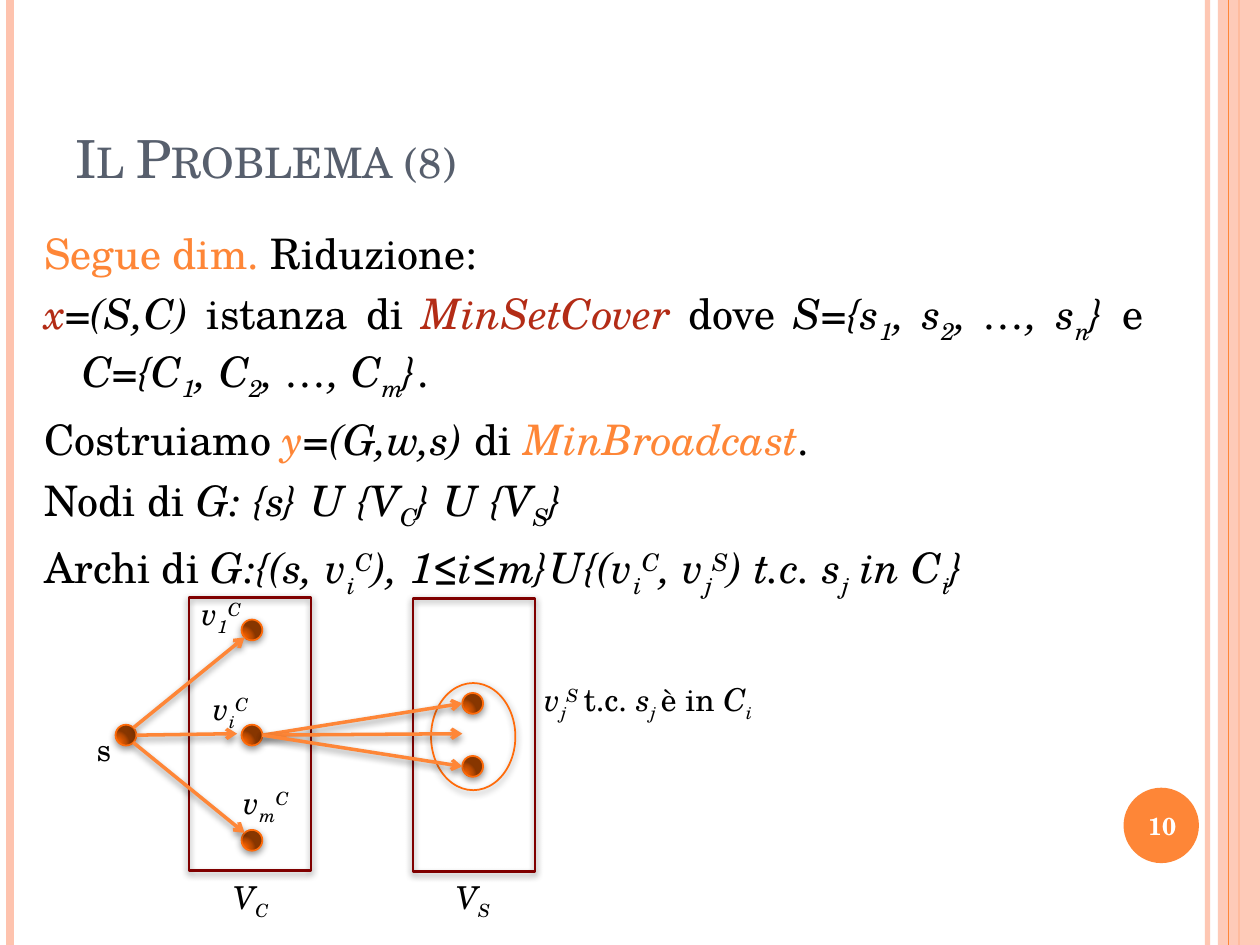
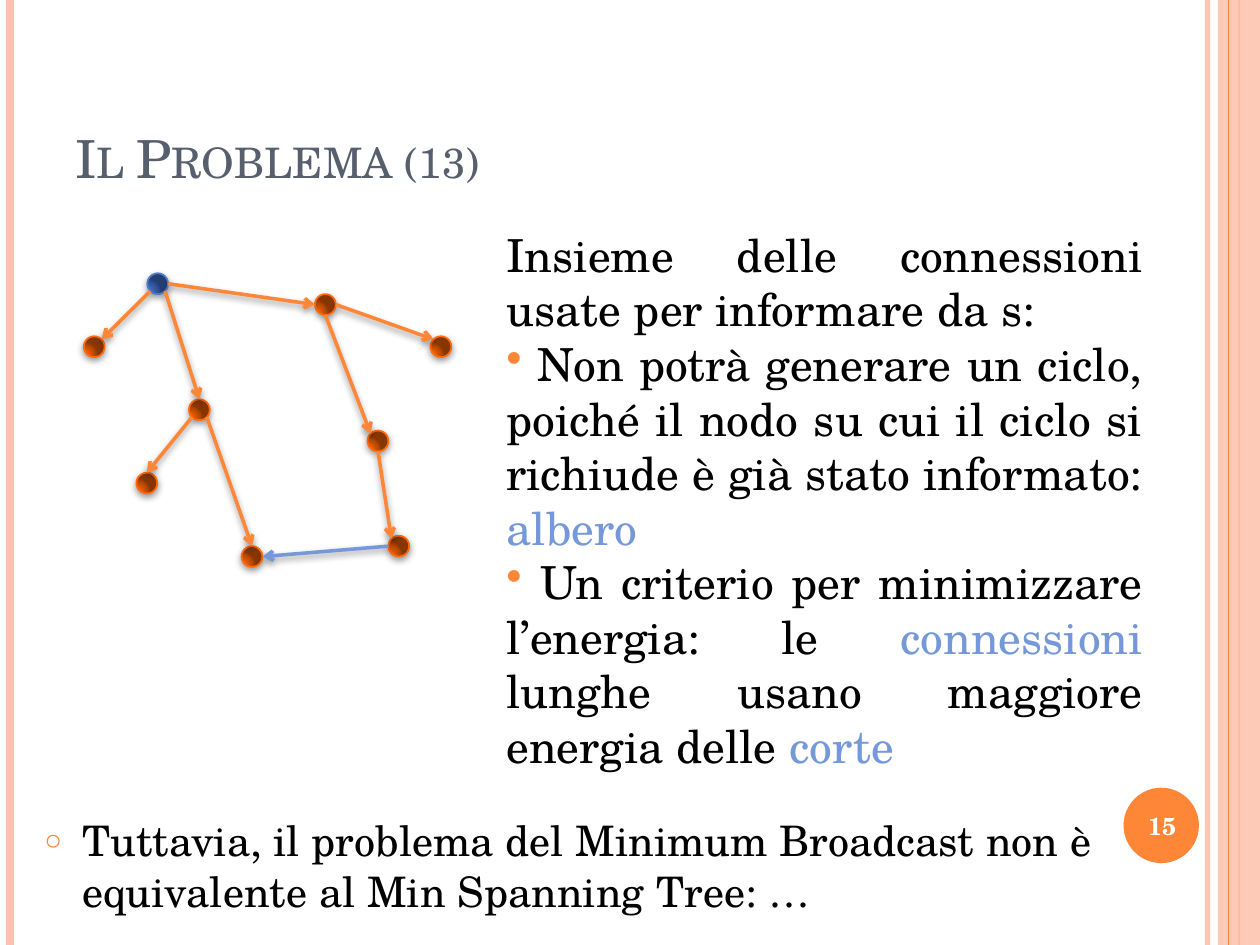
"""Builds two slides on the reduction from MinSetCover to MinBroadcast."""
from dataclasses import dataclass
from itertools import groupby

from lxml import etree
from pptx import Presentation
from pptx.dml.color import RGBColor
from pptx.enum.shapes import MSO_CONNECTOR, MSO_SHAPE
from pptx.enum.text import MSO_ANCHOR, MSO_AUTO_SIZE, PP_ALIGN
from pptx.oxml import parse_xml
from pptx.oxml.ns import nsdecls, qn
from pptx.util import Cm, Pt

STRAIGHT = MSO_CONNECTOR.STRAIGHT
RECTANGLE, OVAL = MSO_SHAPE.RECTANGLE, MSO_SHAPE.OVAL
TOP, MIDDLE, BOTTOM = MSO_ANCHOR.TOP, MSO_ANCHOR.MIDDLE, MSO_ANCHOR.BOTTOM
NO_FIT, GROW = MSO_AUTO_SIZE.NONE, MSO_AUTO_SIZE.SHAPE_TO_FIT_TEXT
LEFT, CENTER, JUSTIFY = PP_ALIGN.LEFT, PP_ALIGN.CENTER, PP_ALIGN.JUSTIFY

SUB, SUPER = -25000, 30000
SHIFTS = {"_": SUB, "^": SUPER}
DIAGONAL = 0.71
SITES = {
    "N": (0, -1), "S": (0, 1), "W": (-1, 0), "E": (1, 0),
    "NE": (DIAGONAL, -DIAGONAL), "NW": (-DIAGONAL, -DIAGONAL),
    "SE": (DIAGONAL, DIAGONAL), "SW": (-DIAGONAL, DIAGONAL),
}


@dataclass(frozen=True)
class Theme:
    font: str = "TeX Gyre Schola"
    ink: str = "000000"
    white: str = "FFFFFF"
    heading: str = "575F6D"
    orange: str = "FE8637"
    peach: str = "FEC3AE"
    red: str = "B32C16"
    blue: str = "7598D9"
    frame: str = "800000"
    rim: str = "FF6B0A"
    source_rim: str = "4F7CCF"
    ember: tuple = ("FD6400", "F46100", "B74900", "873600")
    ocean: tuple = ("4574CC", "4370C5", "2F5397", "233E70")
    stops: tuple = (0, 30, 75, 100)
    title_size: float = 30
    body_size: float = 24
    aside_size: float = 26
    label_size: float = 18
    number_size: float = 14
    node_size: float = 0.42
    indent: float = 0.76


@dataclass(frozen=True)
class Run:
    text: str
    color: str = Theme.ink
    italic: bool = False
    shift: int = 0


def math(source):
    """Turns v_i^C notation into italic runs with raised and lowered letters."""
    letters = [(SHIFTS.get(before, 0), letter)
               for before, letter in zip(" " + source, source) if letter not in SHIFTS]
    return [Run("".join(letter for _, letter in group), italic=True, shift=shift)
            for shift, group in groupby(letters, key=lambda pair: pair[0])]


class Deck:
    """Holds the theme and the current slide and draws each kind of element."""

    def __init__(self, theme):
        self.theme = theme
        self.presentation = Presentation()
        self.presentation.slide_width = Cm(25.4)
        self.presentation.slide_height = Cm(19.05)
        self.slide = None

    def start(self, title, number):
        """Adds a slide with its side bands, title and page number."""
        theme = self.theme
        layout = self.presentation.slide_layouts[1]
        self.slide = self.presentation.slides.add_slide(layout)
        self.line((24.34, 0), (24.34, 19.05), theme.peach, 3, opacity=93)
        self.line((0.21, 0), (0.21, 19.05), theme.peach, 4.5)
        self.line((24.98, 0), (24.98, 19.05), theme.orange, 1.5)
        self.shape(RECTANGLE, (24.55, 0, 0.85, 19.05), fill=theme.peach, opacity=87)
        self.line((24.76, 0), (24.76, 19.05), theme.orange, 0.75)
        self.shape(OVAL, (22.65, 15.88, 1.52, 1.52), fill=theme.orange)

        heading = self.slide.shapes.title
        self.place(heading, (1.27, 0.76, 20.75, 3.18), BOTTOM)
        paragraph = heading.text_frame.paragraphs[0]
        paragraph.alignment = LEFT
        self.add_runs(paragraph, [Run(title, theme.heading)], theme.title_size)
        paragraph.runs[0].font._element.set("cap", "small")

        page = self.slide.shapes.add_textbox(0, 0, 0, 0)
        self.place(page, (22.58, 15.93, 1.7, 1.45), MIDDLE)
        paragraph = page.text_frame.paragraphs[0]
        paragraph.alignment = CENTER
        self.add_runs(paragraph, [Run(str(number), theme.white)], theme.number_size)
        paragraph.runs[0].font.bold = True

    def place(self, holder, box, anchor=TOP, fit=NO_FIT, wrap=True):
        """Moves a text holder and sets how its text sits."""
        holder.left, holder.top, holder.width, holder.height = map(Cm, box)
        frame = holder.text_frame
        frame.vertical_anchor = anchor
        frame.auto_size = fit
        frame.word_wrap = wrap

    def add_runs(self, paragraph, runs, size):
        """Adds runs to a paragraph."""
        for piece in runs:
            run = paragraph.add_run()
            run.text = piece.text
            font = run.font
            font.name = self.theme.font
            font.size = Pt(size)
            font.italic = piece.italic
            font.color.rgb = RGBColor.from_string(piece.color)
            if piece.shift:
                font._element.set("baseline", str(piece.shift))

    def bullet(self, paragraph, mark, indent=0, scale=100):
        """Sets the hanging indent and the bullet, or none if mark is empty."""
        properties = paragraph._p.get_or_add_pPr()
        properties.set("marL", str(Cm(indent)))
        properties.set("indent", str(-Cm(indent)))
        if not mark:
            etree.SubElement(properties, qn("a:buNone"))
            return
        color = etree.SubElement(properties, qn("a:buClr"))
        etree.SubElement(color, qn("a:srgbClr"), val=self.theme.orange)
        etree.SubElement(properties, qn("a:buSzPct"), val=str(scale * 1000))
        etree.SubElement(properties, qn("a:buChar"), char=mark)

    def fill_text(self, holder, paragraphs, size, align):
        """Fills a holder with paragraphs and yields each one."""
        frame = holder.text_frame
        for index, runs in enumerate(paragraphs):
            paragraph = frame.add_paragraph() if index else frame.paragraphs[0]
            paragraph.alignment = align
            self.add_runs(paragraph, runs, size)
            yield paragraph

    def body(self, box, paragraphs, align=LEFT, mark=""):
        """Fills the body placeholder."""
        holder = self.slide.placeholders[1]
        self.place(holder, box)
        for paragraph in self.fill_text(holder, paragraphs, self.theme.body_size, align):
            paragraph.space_before = Pt(6)
            self.bullet(paragraph, mark, self.theme.indent, 70)

    def aside(self, box, paragraphs):
        """Adds a justified text whose first paragraph has no bullet."""
        holder = self.slide.shapes.add_textbox(0, 0, 0, 0)
        self.place(holder, box, fit=GROW)
        filled = self.fill_text(holder, paragraphs, self.theme.aside_size, JUSTIFY)
        for index, paragraph in enumerate(filled):
            self.bullet(paragraph, "•" if index else "")

    def label(self, left, top, width, runs):
        """Adds a one-line label."""
        holder = self.slide.shapes.add_textbox(0, 0, 0, 0)
        self.place(holder, (left, top, width, 1.02), fit=GROW, wrap=False)
        self.add_runs(holder.text_frame.paragraphs[0], runs, self.theme.label_size)

    def finish(self, element, opacity=100, shadow=None):
        """Sets the opacity and the shadow, given as distance and alpha."""
        properties = element._element.spPr
        if opacity < 100:
            for color in properties.iter(qn("a:srgbClr")):
                etree.SubElement(color, qn("a:alpha"), val=str(opacity * 1000))
        effects = etree.SubElement(properties, qn("a:effectLst"))
        if shadow:
            distance, alpha = shadow
            outer = etree.SubElement(effects, qn("a:outerShdw"), blurRad=str(Pt(4)),
                                     dist=str(Pt(distance)), dir="5400000", rotWithShape="0")
            color = etree.SubElement(outer, qn("a:srgbClr"), val=self.theme.ink)
            etree.SubElement(color, qn("a:alpha"), val=str(alpha * 1000))

    def shape(self, kind, box, fill=None, rim=None, weight=1, opacity=100):
        """Adds a preset shape; a tuple of colours as fill makes a round gradient."""
        shape = self.slide.shapes.add_shape(kind, *map(Cm, box))
        if isinstance(fill, str):
            shape.fill.solid()
            shape.fill.fore_color.rgb = RGBColor.from_string(fill)
        else:
            shape.fill.background()
        if rim:
            shape.line.color.rgb = RGBColor.from_string(rim)
            shape.line.width = Pt(weight)
        else:
            shape.line.fill.background()
        if isinstance(fill, tuple):
            stops = "".join(f'<a:gs pos="{stop * 1000}"><a:srgbClr val="{color}"/></a:gs>'
                            for stop, color in zip(self.theme.stops, fill))
            gradient = parse_xml(
                f'<a:gradFill {nsdecls("a")} rotWithShape="1"><a:gsLst>{stops}</a:gsLst>'
                '<a:path path="circle"><a:fillToRect l="5000" t="100000" r="120000" b="10000"/>'
                '</a:path></a:gradFill>')
            properties = shape._element.spPr
            properties.replace(properties.find(qn("a:noFill")), gradient)
        self.finish(shape, opacity, (1.6, 42) if rim else None)

    def line(self, start, end, color, weight, opacity=100, arrow=False):
        """Adds a straight line, with an arrowhead and shadow if asked."""
        points = map(Cm, (*start, *end))
        line = self.slide.shapes.add_connector(STRAIGHT, *points)
        line.line.color.rgb = RGBColor.from_string(color)
        line.line.width = Pt(weight)
        if arrow:
            outline = line._element.spPr.find(qn("a:ln"))
            etree.SubElement(outline, qn("a:tailEnd"), type="arrow")
        self.finish(line, opacity, (2, 40) if arrow else None)

    def node(self, center, source=False):
        """Adds a round graph node around its centre."""
        theme, size = self.theme, self.theme.node_size
        fill, rim = (theme.ocean, theme.source_rim) if source else (theme.ember, theme.rim)
        x, y = center
        self.shape(OVAL, (x - size / 2, y - size / 2, size, size), fill, rim)

    def site(self, center, side):
        """Returns the point on a node's rim at a compass side."""
        return tuple(c + d * self.theme.node_size / 2 for c, d in zip(center, SITES[side]))

    def edge(self, start, start_side, end, end_side=None, color=Theme.orange):
        """Adds an arrow from a node to another node, or to a bare point."""
        target = self.site(end, end_side) if end_side else end
        self.line(self.site(start, start_side), target, color, 2, arrow=True)


def reduction_slide(deck):
    """Draws the slide with the reduction and its layered graph."""
    theme = deck.theme
    deck.start("Il Problema (8)", 10)
    deck.body((0.64, 4.45, 22.66, 8.05), [
        [Run("Segue dim. ", theme.orange), Run("Riduzione:")],
        [Run("x", theme.red, True), *math("=(S,C)"), Run(" istanza di "),
         Run("MinSetCover", theme.red, True), Run(" dove "),
         *math("S={s_1, s_2, …, s_n}"), Run(" e "), *math("C={C_1, C_2, …, C_m}"), Run(".")],
        [Run("Costruiamo "), Run("y", theme.orange, True), *math("=(G,w,s)"), Run(" di "),
         Run("MinBroadcast", theme.orange, True), Run(".")],
        [Run("Nodi di "), *math("G: {s} U {V_C} U {V_S}")],
        [Run("Archi di "), *math("G:{(s, v_i^C), 1≤i≤m}U{(v_i^C, v_j^S) t.c. s_j in C_i}")],
    ], JUSTIFY)

    source = (2.54, 14.82)
    first, middle, last = sets = [(5.08, 12.7 + 2.12 * row) for row in range(3)]
    upper, lower = covered = [(9.53, 14.18), (9.53, 15.45)]
    for center in (source, *sets, *covered):
        deck.node(center)
    for left, top in ((3.81, 12.04), (8.33, 12.06)):
        deck.shape(RECTANGLE, (left, top, 2.46, 5.51), rim=theme.frame, weight=1.5)
    deck.shape(OVAL, (8.69, 13.77, 1.7, 2.16), rim=theme.rim)

    deck.edge(source, "NE", first, "SW")
    deck.edge(source, "E", (4.78, 14.79))
    deck.edge(source, "SE", last, "NW")
    deck.edge(middle, "E", upper, "W")
    deck.edge(middle, "E", (9.32, 14.79))
    deck.edge(middle, "E", lower, "W")

    deck.label(1.7, 14.6, 0.81, [Run("s")])
    for left, top, width, name in (
            (3.81, 11.86, 1.55, "v_1^C"), (4.04, 13.77, 1.45, "v_i^C"),
            (4.65, 15.67, 1.7, "v_m^C"), (4.45, 17.58, 1.42, "V_C"),
            (8.94, 17.58, 1.42, "V_S")):
        deck.label(left, top, width, math(name))
    deck.label(10.72, 13.59, 4.98, [
        *math("v_j"), Run("S ", italic=True, shift=SUPER), Run("t.c. "),
        *math("s"), Run("j ", italic=True, shift=SUB), Run("è in"), *math(" C_i")])


def tree_slide(deck):
    """Draws the slide with the broadcast tree."""
    theme = deck.theme
    deck.start("Il Problema (13)", 15)
    deck.body((0.64, 16.3, 22.66, 2.11), [[Run(
        "Tuttavia, il problema del Minimum Broadcast non è equivalente "
        "al Min Spanning Tree: …")]], mark="○")

    source, relay, hub = (3.18, 5.72), (4.02, 8.26), (6.56, 6.14)
    west, leaf, meeting = (1.9, 6.99), (2.96, 9.74), (5.08, 11.22)
    east, descent, closing = (8.89, 6.99), (7.62, 8.89), (8.04, 11.01)
    deck.node(source, source=True)
    for center in (relay, hub, west, leaf, meeting, east, descent, closing):
        deck.node(center)
    for edge in (
            (source, "SW", west, "NE"), (source, "SE", relay, "N"),
            (source, "E", hub, "W"), (relay, "SW", leaf, "N"),
            (relay, "SE", meeting, "N"), (hub, "S", descent, "NW"),
            (hub, "E", east, "NW"), (descent, "S", closing, "NW"),
            (closing, "W", meeting, "E", theme.blue)):
        deck.edge(*edge)

    deck.aside((9.96, 4.45, 13.34, 11.38), [
        [Run("Insieme delle connessioni usate per informare da s:")],
        [Run(" Non potrà generare un ciclo, poiché il nodo su cui il ciclo si richiude "
             "è già stato informato: "), Run("albero", theme.blue)],
        [Run(" Un criterio per minimizzare l’energia: le "), Run("connessioni ", theme.blue),
         Run("lunghe usano maggiore energia delle "), Run("corte", theme.blue)],
    ])


def main():
    """Builds and saves the deck."""
    deck = Deck(Theme())
    reduction_slide(deck)
    tree_slide(deck)
    deck.presentation.save("out.pptx")


if __name__ == "__main__":
    main()
